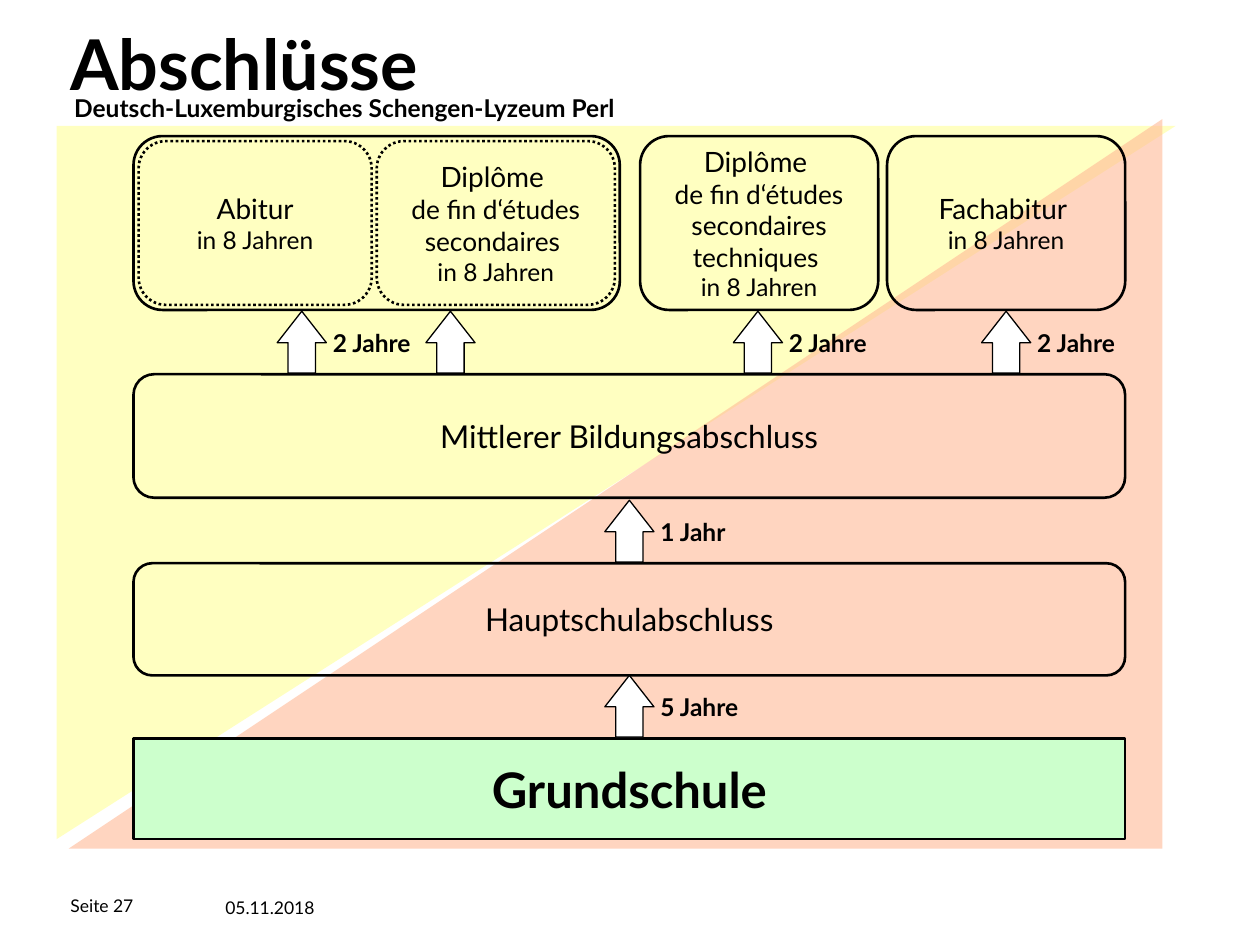
import copy

import lxml.etree
import pptx
import pptx.dml.color
import pptx.enum.dml
import pptx.enum.shapes
import pptx.enum.text
import pptx.oxml.ns
import pptx.util

Inches = pptx.util.Inches
Pt = pptx.util.Pt
RGBColor = pptx.dml.color.RGBColor
SHAPE = pptx.enum.shapes.MSO_SHAPE
ALIGN = pptx.enum.text.PP_ALIGN
ANCHOR = pptx.enum.text.MSO_ANCHOR
DASH = pptx.enum.dml.MSO_LINE

FONT = "Lato"
BLACK = RGBColor(0x00, 0x00, 0x00)
WHITE = RGBColor(0xFF, 0xFF, 0xFF)
YELLOW = RGBColor(0xFF, 0xFF, 0x99)
SALMON = RGBColor(0xFF, 0xBA, 0x97)
GREEN = RGBColor(0xCC, 0xFF, 0xCC)

LEFT, WIDTH = 1.06, 7.87
DEGREE_TOP, DEGREE_HEIGHT = 1.08, 1.38
ARROW_WIDTH, ARROW_HEIGHT = 0.39, 0.49


def write(sp, lines, align=ALIGN.LEFT, anchor=ANCHOR.TOP, bold=False, inset=None):
    """Write (text, size) lines into one paragraph separated by line breaks."""
    tf = sp.text_frame
    tf.word_wrap = True
    tf.vertical_anchor = anchor
    if inset is not None:
        tf.margin_left = tf.margin_right = Inches(inset)
        tf.margin_top = tf.margin_bottom = Inches(inset)
    p = tf.paragraphs[0]
    p.text = "\v".join(text for text, size in lines)
    p.alignment = align
    for r, (text, size) in zip(p.runs, lines):
        r.font.name = FONT
        r.font.size = Pt(size)
        r.font.bold = bold
        r.font.color.rgb = BLACK
    for br in p._p.findall(pptx.oxml.ns.qn("a:br")):
        br.append(copy.deepcopy(br.getprevious().rPr))


def add_shape(s, kind, box, fill=None, line=None, dash=None):
    """Add a preset shape with optional fill and black outline."""
    sp = s.shapes.add_shape(kind, *map(Inches, box))
    sp.shadow.inherit = False
    if fill is None:
        sp.fill.background()
    else:
        sp.fill.solid()
        sp.fill.fore_color.rgb = fill
    if line is None:
        sp.line.fill.background()
    else:
        sp.line.color.rgb = BLACK
        sp.line.width = Pt(line)
        if dash is not None:
            sp.line.dash_style = dash
    return sp


def add_triangle(s, box, color, rotation):
    """Add a rotated background triangle with 60 percent opacity."""
    sp = add_shape(s, SHAPE.RIGHT_TRIANGLE, box, color)
    sp.rotation = rotation
    clr = sp.fill._xPr.find(".//" + pptx.oxml.ns.qn("a:srgbClr"))
    lxml.etree.SubElement(clr, pptx.oxml.ns.qn("a:alpha"), val="60000")


def add_stage(s, box, lines, kind=SHAPE.FLOWCHART_ALTERNATE_PROCESS,
              fill=None, dash=None, bold=False):
    """Add an outlined box with centred text."""
    sp = add_shape(s, kind, box, fill, 1.5, dash)
    write(sp, lines, ALIGN.CENTER, ANCHOR.MIDDLE, bold)


def add_arrow(s, left, top, label=None):
    """Add an upward arrow with its duration to the right."""
    sp = add_shape(s, SHAPE.UP_ARROW, (left, top, ARROW_WIDTH, ARROW_HEIGHT), WHITE, 0.75)
    sp.adjustments[0] = 0.557
    sp.adjustments[1] = 0.64
    if label:
        box = (left + 0.43, top + 0.12, 0.79, 0.24)
        sp = add_shape(s, SHAPE.FLOWCHART_ALTERNATE_PROCESS, box)
        write(sp, [(label, 14)], bold=True, inset=0)


def add_text(s, box, text, size, **style):
    """Add a one-line text box."""
    sp = s.shapes.add_textbox(*map(Inches, box))
    write(sp, [(text, size)], **style)


def main():
    """Build the slide of school-leaving certificates."""
    prs = pptx.Presentation()
    prs.slide_width, prs.slide_height = Inches(10), Inches(7.5)
    s = prs.slides.add_slide(prs.slide_layouts[6])

    add_text(s, (0.56, 7.07, 1.26, 0.24), "Seite 27", 10, anchor=ANCHOR.MIDDLE, inset=0)
    add_text(s, (1.69, 7.07, 1.26, 0.24), "05.11.2018", 10)
    add_triangle(s, (2.06, -0.61, 5.66, 8.88), YELLOW, 90)
    add_triangle(s, (1.99, -0.5, 5.79, 8.68), SALMON, 270)

    add_stage(s, (LEFT, 4.47, WIDTH, 0.89), [("Hauptschulabschluss", 18)])
    add_stage(s, (LEFT, 2.97, WIDTH, 0.98), [("Mittlerer Bildungsabschluss", 18)])
    add_stage(s, (LEFT, 5.86, WIDTH, 0.8), [("Grundschule", 28)],
              SHAPE.RECTANGLE, GREEN, bold=True)

    diploma, duration = ("Diplôme ", 16), ("in 8 Jahren", 14)
    add_stage(s, (1.1, 1.12, 1.85, 1.3), [("Abitur", 16), duration], dash=DASH.ROUND_DOT)
    add_stage(s, (2.99, 1.12, 1.89, 1.3),
              [diploma, ("de fin d‘études secondaires ", 15), duration], dash=DASH.ROUND_DOT)
    add_stage(s, (5.08, DEGREE_TOP, 1.89, DEGREE_HEIGHT),
              [diploma, ("de fin d‘études secondaires techniques ", 15), duration])
    add_stage(s, (7.04, DEGREE_TOP, 1.89, DEGREE_HEIGHT), [("Fachabitur ", 16), duration])
    add_shape(s, SHAPE.ROUNDED_RECTANGLE, (LEFT, DEGREE_TOP, 3.86, DEGREE_HEIGHT), line=1.5)

    for left, label in ((2.2, "2 Jahre"), (3.38, None), (5.82, "2 Jahre"), (7.79, "2 Jahre")):
        add_arrow(s, left, 2.47, label)
    for top, label in ((3.97, "1 Jahr"), (5.36, "5 Jahre")):
        add_arrow(s, 4.8, top, label)

    add_text(s, (0.49, 0.69, 5.51, 0.34),
             "Deutsch-Luxemburgisches Schengen-Lyzeum Perl", 14, bold=True)
    add_text(s, (0.46, 0.11, 3.48, 0.78), "Abschlüsse", 40, bold=True)
    prs.save("out.pptx")


if __name__ == "__main__":
    main()
